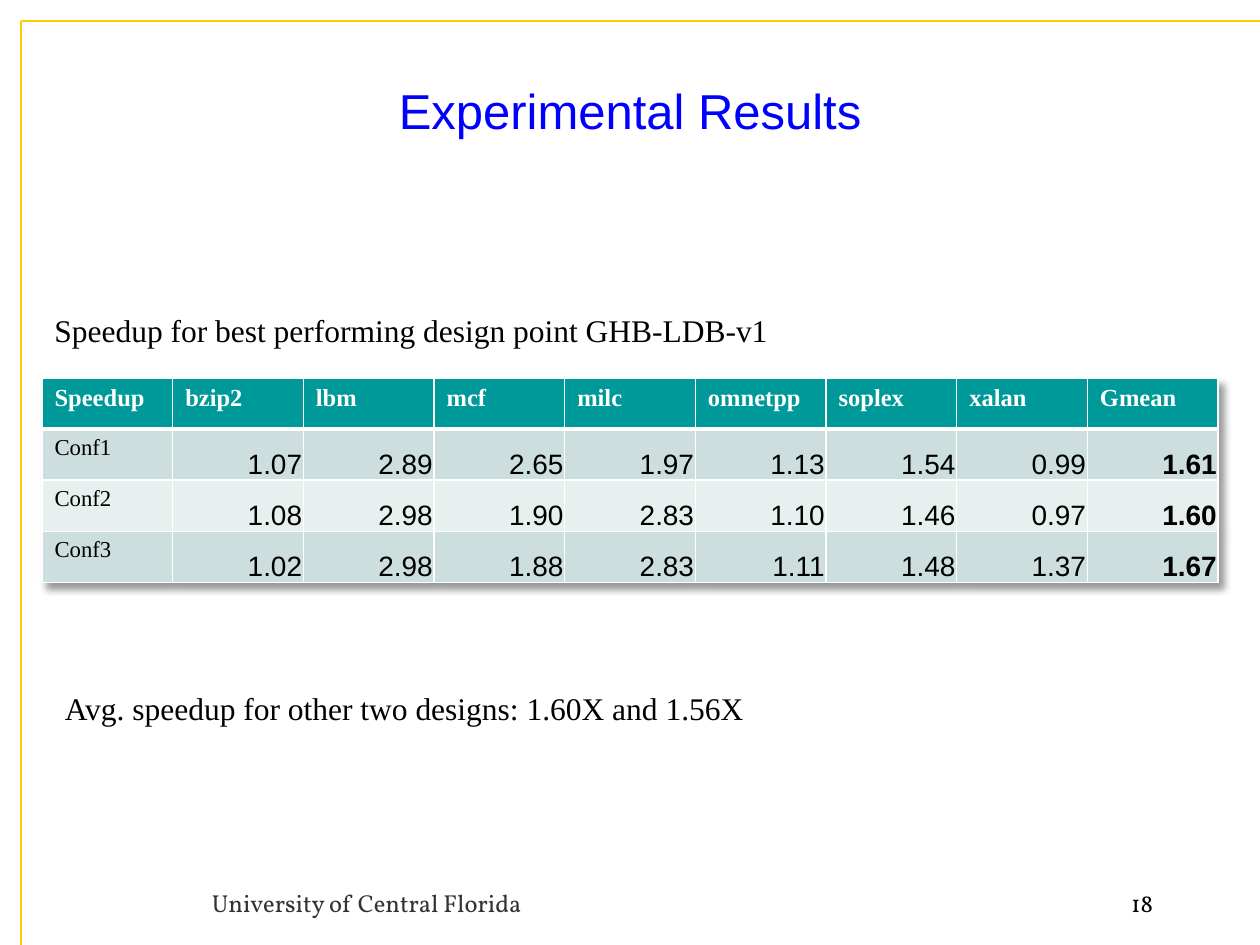
from lxml.etree import SubElement
from pptx import Presentation
from pptx.dml.color import RGBColor
from pptx.enum.shapes import MSO_CONNECTOR
from pptx.enum.text import MSO_ANCHOR as Anchor, PP_ALIGN as Align
from pptx.oxml import parse_xml
from pptx.oxml.ns import nsdecls, qn
from pptx.util import Pt

SERIF, SANS, FOOTER = "Times New Roman", "Arial", "Vollkorn"
BLACK, WHITE, GOLD, BLUE, GREY = "000000", "FFFFFF", "FFCC00", "0000FF", "333333"
HEADER_FILL, BAND_FILLS = "009999", ("CCDEDE", "E7EFEF")

RESULTS = [
    ("Speedup", "bzip2", "lbm", "mcf", "milc", "omnetpp", "soplex", "xalan", "Gmean"),
    ("Conf1", "1.07", "2.89", "2.65", "1.97", "1.13", "1.54", "0.99", "1.61"),
    ("Conf2", "1.08", "2.98", "1.90", "2.83", "1.10", "1.46", "0.97", "1.60"),
    ("Conf3", "1.02", "2.98", "1.88", "2.83", "1.11", "1.48", "1.37", "1.67"),
]


def color(value):
    return RGBColor.from_string(value)


def write(frame, text, size=18, font=SERIF, fill=BLACK, bold=False, align=Align.LEFT):
    paragraph = frame.paragraphs[0]
    paragraph.text = text
    paragraph.alignment = align
    paragraph.font.size = Pt(size)
    paragraph.font.name = font
    paragraph.font.bold = bold
    paragraph.font.color.rgb = color(fill)


def set_borders(cell, top, bottom):
    """Give a cell white borders, with the top and bottom widths in points."""
    properties = cell._tc.get_or_add_tcPr()
    widths = {"lnL": 1, "lnR": 1, "lnT": top, "lnB": bottom}
    for index, (side, width) in enumerate(widths.items()):
        properties.insert(index, parse_xml(
            f'<a:{side} {nsdecls("a")} w="{Pt(width)}"><a:solidFill>'
            f'<a:srgbClr val="{WHITE}"/></a:solidFill></a:{side}>'))


class SlideBuilder:
    def __init__(self, presentation):
        self.slide = presentation.slides.add_slide(presentation.slide_layouts[5])

    def title(self, text, left, top, width, height):
        shape = self.slide.shapes.title
        shape.left, shape.top, shape.width, shape.height = map(Pt, (left, top, width, height))
        shape.text_frame.vertical_anchor = Anchor.MIDDLE
        write(shape.text_frame, text, size=28, font=SANS, fill=BLUE, align=Align.CENTER)

    def line(self, x1, y1, x2, y2, width):
        connector = self.slide.shapes.add_connector(
            MSO_CONNECTOR.STRAIGHT, *map(Pt, (x1, y1, x2, y2)))
        connector.line.color.rgb = color(GOLD)
        connector.line.width = Pt(width)
        SubElement(connector._element.spPr, qn("a:effectLst"))

    def text(self, text, left, top, width, height, wrap=True, **style):
        box = self.slide.shapes.add_textbox(*map(Pt, (left, top, width, height)))
        box.text_frame.word_wrap = wrap
        write(box.text_frame, text, **style)

    def table(self, rows, left, top, width, height):
        table = self.slide.shapes.add_table(
            len(rows), len(rows[0]), *map(Pt, (left, top, width, height))).table
        table.horz_banding = False
        table._tbl.tblPr.insert(0, parse_xml(
            f'<a:effectLst {nsdecls("a")}><a:outerShdw blurRad="{Pt(4)}" dist="{Pt(4)}" '
            'dir="2700000" algn="tl" rotWithShape="0"><a:srgbClr val="000000">'
            '<a:alpha val="40000"/></a:srgbClr></a:outerShdw></a:effectLst>'))
        for row, values in enumerate(rows):
            table.rows[row].height = Pt(height / len(rows))
            for column, value in enumerate(values):
                self.cell(table.cell(row, column), value, row, column,
                          is_last=column == len(values) - 1)

    def cell(self, cell, value, row, column, is_last):
        cell.fill.solid()
        cell.fill.fore_color.rgb = color(BAND_FILLS[(row - 1) % 2] if row else HEADER_FILL)
        set_borders(cell, top=3 if row == 1 else 1, bottom=1 if row else 3)
        if row == 0:
            write(cell.text_frame, value, size=14, fill=WHITE, bold=True)
        elif column == 0:
            write(cell.text_frame, value, size=13)
        else:
            cell.vertical_anchor = Anchor.BOTTOM
            cell.margin_left = cell.margin_right = cell.margin_top = Pt(0.75)
            cell.margin_bottom = 0
            write(cell.text_frame, value, size=16, font=SANS, bold=is_last, align=Align.RIGHT)


def main():
    presentation = Presentation()
    presentation.slide_width, presentation.slide_height = Pt(720), Pt(540)
    builder = SlideBuilder(presentation)
    builder.line(12, 12, 12, 540, width=0.75)
    builder.line(12, 12, 720, 12, width=1)
    builder.title("Experimental Results", 18, 36, 684, 54)
    builder.text("University of Central Florida", 114, 504, 492, 24,
                 size=14, font=FOOTER, fill=GREY)
    builder.text("18", 600, 504, 66, 24, size=14, font=FOOTER, align=Align.RIGHT)
    builder.text("Speedup for best performing design point GHB-LDB-v1 ",
                 24, 174, 436, 29, wrap=False)
    builder.table(RESULTS, 24, 216, 672, 116.8)
    builder.text("Avg. speedup for other two designs: 1.60X and 1.56X",
                 30, 390, 405, 29, wrap=False)
    presentation.save("out.pptx")


if __name__ == "__main__":
    main()
